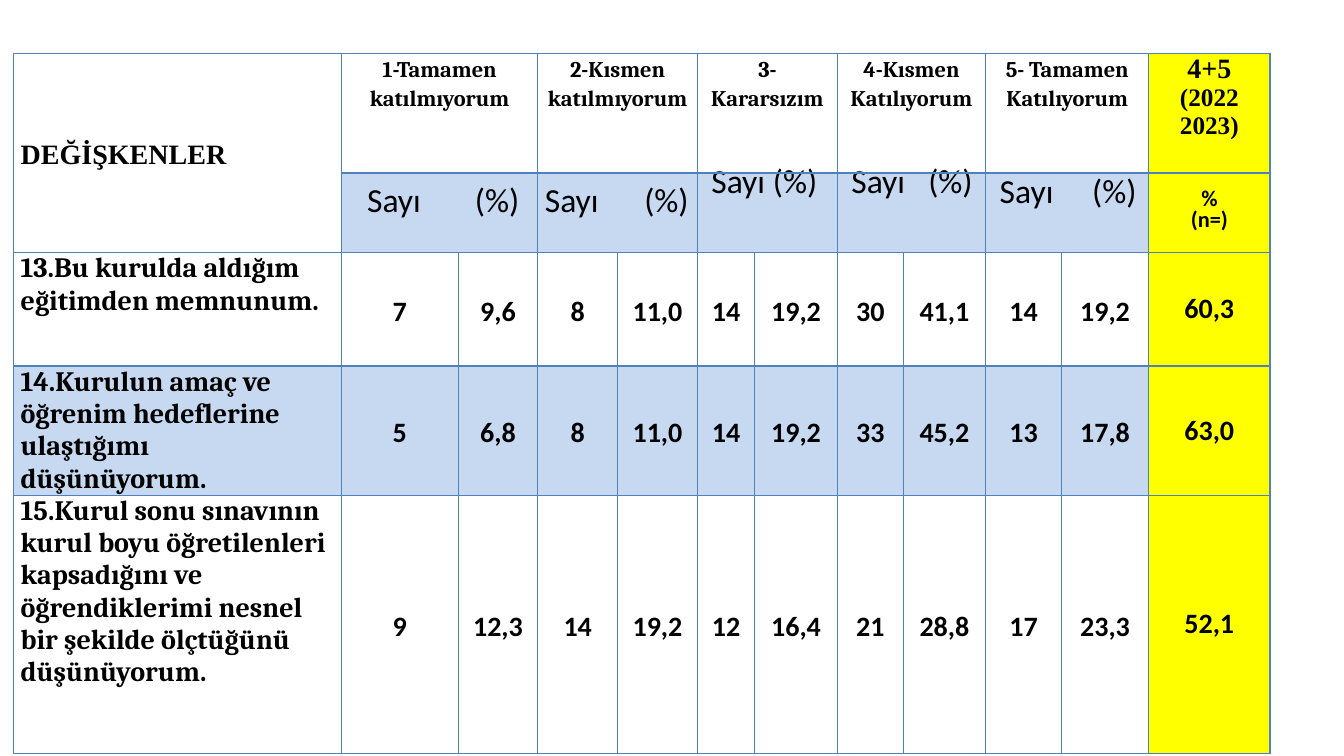
import pptx
import pptx.util
import pptx.dml.color
import pptx.enum.text
import pptx.oxml
import pptx.oxml.ns

Pt = pptx.util.Pt
ALIGN = pptx.enum.text.PP_ALIGN
ANCHOR = pptx.enum.text.MSO_ANCHOR
COLORS = {"text": "000000", "line": "4F81BD", "band": "C6D9F1", "total": "FFFF00"}
CENTER = {"alignment": ALIGN.CENTER, "line_spacing": 1.15}
NUMBER = {"name": "Calibri", "size": Pt(20), "bold": True}
QUESTION = {"name": "Cambria", "size": Pt(20), "bold": True}
HEADING = {"name": "Cambria", "size": Pt(16), "bold": True}
SUBHEADING = {"name": "Calibri", "size": Pt(24), "bold": False}

column_widths = [234, 83.5, 57, 57, 57, 41, 59, 47, 59, 54, 62.5, 86.5]
row_heights = [85.5, 57, 81, 92, 184.5]

answers = [
    ("1-Tamamen katılmıyorum", 13.5, 77, 0),
    ("2-Kısmen katılmıyorum", 0, 71, 0),
    ("3-Kararsızım", 5, 44, 27),
    ("4-Kısmen Katılıyorum", 5, 55, 27),
    ("5- Tamamen Katılıyorum", 5, 66, 14),
]
results = [
    ("13.Bu kurulda aldığım eğitimden memnunum.",
     "7 9,6 8 11,0 14 19,2 30 41,1 14 19,2", "60,3"),
    ("14.Kurulun amaç ve öğrenim hedeflerine ulaştığımı düşünüyorum.",
     "5 6,8 8 11,0 14 19,2 33 45,2 13 17,8", "63,0"),
    ("15.Kurul sonu sınavının kurul boyu öğretilenleri kapsadığını ve öğrendiklerimi "
     "nesnel bir şekilde ölçtüğünü düşünüyorum.",
     "9 12,3 14 19,2 12 16,4 21 28,8 17 23,3", "52,1"),
]


def write(cell, text, font, layout, anchor=ANCHOR.MIDDLE):
    cell.vertical_anchor = anchor
    frame = cell.text_frame
    para = frame.paragraphs[0] if not frame.text else frame.add_paragraph()
    for key, value in layout.items():
        setattr(para, key, value)
    span = para.add_run()
    span.text = text
    for key, value in font.items():
        setattr(span.font, key, value)
    span.font.color.rgb = pptx.dml.color.RGBColor.from_string(COLORS["text"])
    return para


def add_borders(cell, widths):
    properties = cell._tc.get_or_add_tcPr()
    for index, (side, width) in enumerate(widths.items()):
        border = pptx.oxml.parse_xml(
            f'<a:ln{side} {pptx.oxml.ns.nsdecls("a")} w="{int(Pt(width))}">'
            f'<a:solidFill><a:srgbClr val="{COLORS["line"]}"/></a:solidFill></a:ln{side}>')
        properties.insert(index, border)


deck = pptx.Presentation()
deck.slide_width, deck.slide_height = Pt(960), Pt(540)
page = deck.slides.add_slide(deck.slide_layouts[6])
frame = page.shapes.add_table(len(row_heights), len(column_widths), Pt(9.75), Pt(38),
                              Pt(sum(column_widths)), Pt(sum(row_heights)))
table = frame.table
table.first_row = table.horz_banding = False
for column, width in zip(table.columns, column_widths):
    column.width = Pt(width)
for row, height in zip(table.rows, row_heights):
    row.height = Pt(height)

last = len(column_widths) - 1
for r in range(len(row_heights)):
    for c in range(len(column_widths)):
        cell = table.cell(r, c)
        cell.margin_left = cell.margin_right = Pt(5)
        cell.margin_top = cell.margin_bottom = 0
        fill = None
        if c == last:
            fill = "total"
        elif r == 3 or (r == 1 and c > 0):
            fill = "band"
        if fill:
            cell.fill.solid()
            cell.fill.fore_color.rgb = pptx.dml.color.RGBColor.from_string(COLORS[fill])
        else:
            cell.fill.background()
        add_borders(cell, {"L": 1, "R": 1,
                           "T": 2.25 if r == 1 and c > 0 else 1,
                           "B": 2.25 if r == 0 and c > 0 else 1})

table.cell(0, 0).merge(table.cell(1, 0))
write(table.cell(0, 0), "DEĞİŞKENLER",
      {"name": "Times New Roman", "size": Pt(20), "bold": True}, {"line_spacing": 1.15})

for index, (label, indent, tab, lift) in enumerate(answers):
    c = 1 + 2 * index
    for r in range(2):
        table.cell(r, c).merge(table.cell(r, c + 1))
    write(table.cell(0, c), label, HEADING, CENTER, ANCHOR.TOP)
    cell = table.cell(1, c)
    cell.margin_left, cell.margin_bottom = Pt(5 + indent), Pt(lift)
    para = write(cell, "Sayı\t(%)", SUBHEADING,
                 {"alignment": ALIGN.LEFT, "line_spacing": Pt(13)})
    para._p.get_or_add_pPr().append(pptx.oxml.parse_xml(
        f'<a:tabLst {pptx.oxml.ns.nsdecls("a")}><a:tab pos="{int(Pt(tab))}" algn="l"/></a:tabLst>'))

for text, size in [("4+5", 20), ("(2022 2023)", 18)]:
    write(table.cell(0, last), text, {"name": "Times New Roman", "size": Pt(size), "bold": True},
          {"alignment": ALIGN.CENTER}, ANCHOR.TOP)
for text in ["%", "(n=)"]:
    write(table.cell(1, last), text, {"name": "Calibri", "size": Pt(16), "bold": True},
          {"alignment": ALIGN.CENTER, "line_spacing": Pt(15)})

for r, (question, values, total) in enumerate(results, start=2):
    write(table.cell(r, 0), question, QUESTION, {"alignment": ALIGN.LEFT}, ANCHOR.TOP)
    for c, value in enumerate(values.split(), start=1):
        write(table.cell(r, c), value, NUMBER, CENTER)
    write(table.cell(r, last), total, NUMBER, {"alignment": ALIGN.CENTER})

deck.save("out.pptx")
